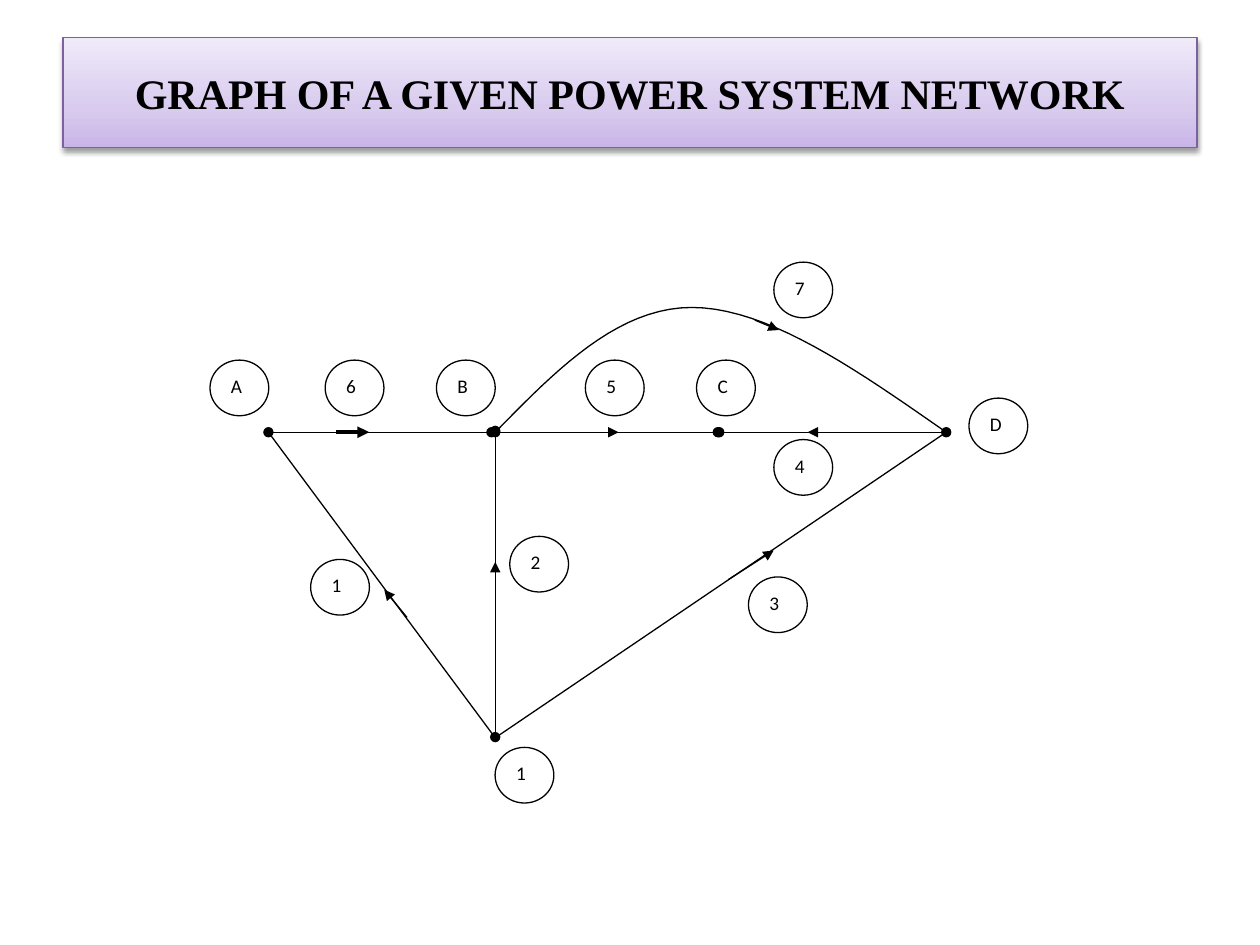
from lxml import etree
from pptx import Presentation
from pptx import util as u
from pptx.dml.color import RGBColor
from pptx.enum import shapes, text
from pptx.oxml import ns

BLACK = RGBColor(0, 0, 0)
WHITE = RGBColor(255, 255, 255)
PURPLE = RGBColor(0x7D, 0x60, 0xA0)
TITLE_STOPS = [
    (0, RGBColor(0xC9, 0xB5, 0xE8)),
    (35, RGBColor(0xD8, 0xCB, 0xEE)),
    (100, RGBColor(0xF0, 0xEA, 0xF9)),
]

AXIS = 247
NODE_A = (153.4, AXIS)
NODE_B = (283, AXIS)
NODE_C = (410.2, AXIS)
NODE_D = (540.7, AXIS)
GROUND = (283, 421.6)
CURVE = [
    (NODE_B, (317.5, 211.7), (352.8, 175.7), (395.3, 175.7)),
    ((395.3, 175.7), (439, 175.7), (490, 211.7), NODE_D),
]
ROW = 205.8
LABELS = [
    ("A", 120, ROW), ("6", 185.8, ROW), ("B", 249.4, ROW),
    ("5", 334.5, ROW), ("C", 398, ROW), ("D", 553.7, 227.5),
    ("7", 442.2, 149.8), ("4", 442.2, 251.2), ("3", 427.7, 329.7),
    ("2", 291.3, 306.5), ("1", 177.5, 319.7), ("1", 282.9, 427.1),
]
ARROWS = [
    ((416.2, 331.2), (442.1, 314.6), 0.75),
    ((232.6, 352.8), (219.6, 337), 0.75),
    ((283, 339.1), (283, 321.1), 0.75),
    ((192.2, AXIS), (211, AXIS), 2.25),
    ((334.8, AXIS), (353.5, AXIS), 0.75),
    ((481, AXIS), (461.5, AXIS), 0.75),
    ((431.3, 182.9), (445, 188.6), 0.75),
]


def add_node(parent, tag, **attributes):
    return etree.SubElement(parent, ns.qn(tag), attributes)


def bezier(points, steps=20):
    for step in range(1, steps + 1):
        t = step / steps
        weights = ((1 - t) ** 3, 3 * t * (1 - t) ** 2, 3 * t * t * (1 - t), t ** 3)
        yield tuple(sum(w * p[axis] for w, p in zip(weights, points)) for axis in (0, 1))


class Sketch:
    label_font = "Calibri"
    title_font = "Times New Roman"
    label_size = (33.6, 31.8)
    thin = 0.75

    def __init__(self, slide):
        self.slide = slide

    def outline(self, shape, color=BLACK, width=thin):
        shape.line.color.rgb = color
        shape.line.width = u.Pt(width)

    def box(self, kind, left, top, width, height, color=BLACK):
        box = self.slide.shapes.add_shape(
            kind, u.Pt(left), u.Pt(top), u.Pt(width), u.Pt(height))
        box.shadow.inherit = False
        self.outline(box, color)
        return box

    def add_words(self, box, words, font, size, align, anchor, bold=False):
        box.text_frame.word_wrap = True
        box.text_frame.vertical_anchor = anchor
        para = box.text_frame.paragraphs[0]
        para.alignment = align
        span = para.add_run()
        span.text = words
        span.font.name = font
        span.font.size = u.Pt(size)
        span.font.bold = bold
        span.font.color.rgb = BLACK
        return para

    def title(self, words):
        box = self.box(shapes.MSO_SHAPE.RECTANGLE, 36, 21.6, 648, 62.6, PURPLE)
        properties = box._element.spPr
        gradient = etree.Element(ns.qn("a:gradFill"), rotWithShape="1")
        stops = add_node(gradient, "a:gsLst")
        for position, color in TITLE_STOPS:
            stop = add_node(stops, "a:gs", pos=str(position * 1000))
            add_node(stop, "a:srgbClr", val=str(color))
        add_node(gradient, "a:lin", ang="16200000", scaled="1")
        properties.find(ns.qn("a:prstGeom")).addnext(gradient)
        shadow = add_node(
            properties.find(ns.qn("a:effectLst")), "a:outerShdw",
            blurRad=str(u.Pt(3.1)), dist=str(u.Pt(1.6)), dir="5400000", rotWithShape="0")
        add_node(add_node(shadow, "a:srgbClr", val=str(BLACK)), "a:alpha", val="38000")
        self.add_words(box, words, self.title_font, 24, text.PP_ALIGN.CENTER,
                       text.MSO_ANCHOR.MIDDLE, bold=True)

    def label(self, words, left, top):
        box = self.box(shapes.MSO_SHAPE.OVAL, left, top, *self.label_size)
        box.fill.solid()
        box.fill.fore_color.rgb = WHITE
        para = self.add_words(box, words, self.label_font, 11, text.PP_ALIGN.LEFT,
                              text.MSO_ANCHOR.TOP)
        para.space_after = u.Pt(10)

    def line(self, start, end, width=thin, head=None, tail=None):
        line = self.slide.shapes.add_connector(
            shapes.MSO_CONNECTOR.STRAIGHT, *(u.Pt(value) for value in (*start, *end)))
        self.outline(line, width=width)
        stroke = line._element.spPr.find(ns.qn("a:ln"))
        for tag, kind in (("a:headEnd", head), ("a:tailEnd", tail)):
            if kind:
                add_node(stroke, tag, type=kind)
        add_node(line._element.spPr, "a:effectLst")

    def curve(self, segments):
        start = segments[0][0]
        builder = self.slide.shapes.build_freeform(u.Pt(start[0]), u.Pt(start[1]))
        points = [point for segment in segments for point in bezier(segment)]
        builder.add_line_segments([(u.Pt(x), u.Pt(y)) for x, y in points], close=False)
        curve = builder.convert_to_shape()
        curve.shadow.inherit = False
        curve.fill.background()
        self.outline(curve)


def main():
    deck = Presentation()
    deck.slide_width, deck.slide_height = u.Pt(720), u.Pt(540)
    page = Sketch(deck.slides.add_slide(deck.slide_layouts[6]))
    page.title("GRAPH OF A GIVEN POWER SYSTEM NETWORK")
    dotted_edges = [
        ((283, 246.2), (283, 421.2)), (NODE_A, NODE_B),
        ((280.8, AXIS), NODE_C), ((411, AXIS), NODE_D),
    ]
    for start, end in dotted_edges:
        page.line(start, end, head="oval", tail="oval")
    page.curve(CURVE)
    page.line(GROUND, NODE_D)
    page.line(NODE_A, GROUND)
    for start, end, width in ARROWS:
        page.line(start, end, width, tail="triangle")
    for words, left, top in LABELS:
        page.label(words, left, top)
    deck.save("out.pptx")


if __name__ == "__main__":
    main()
